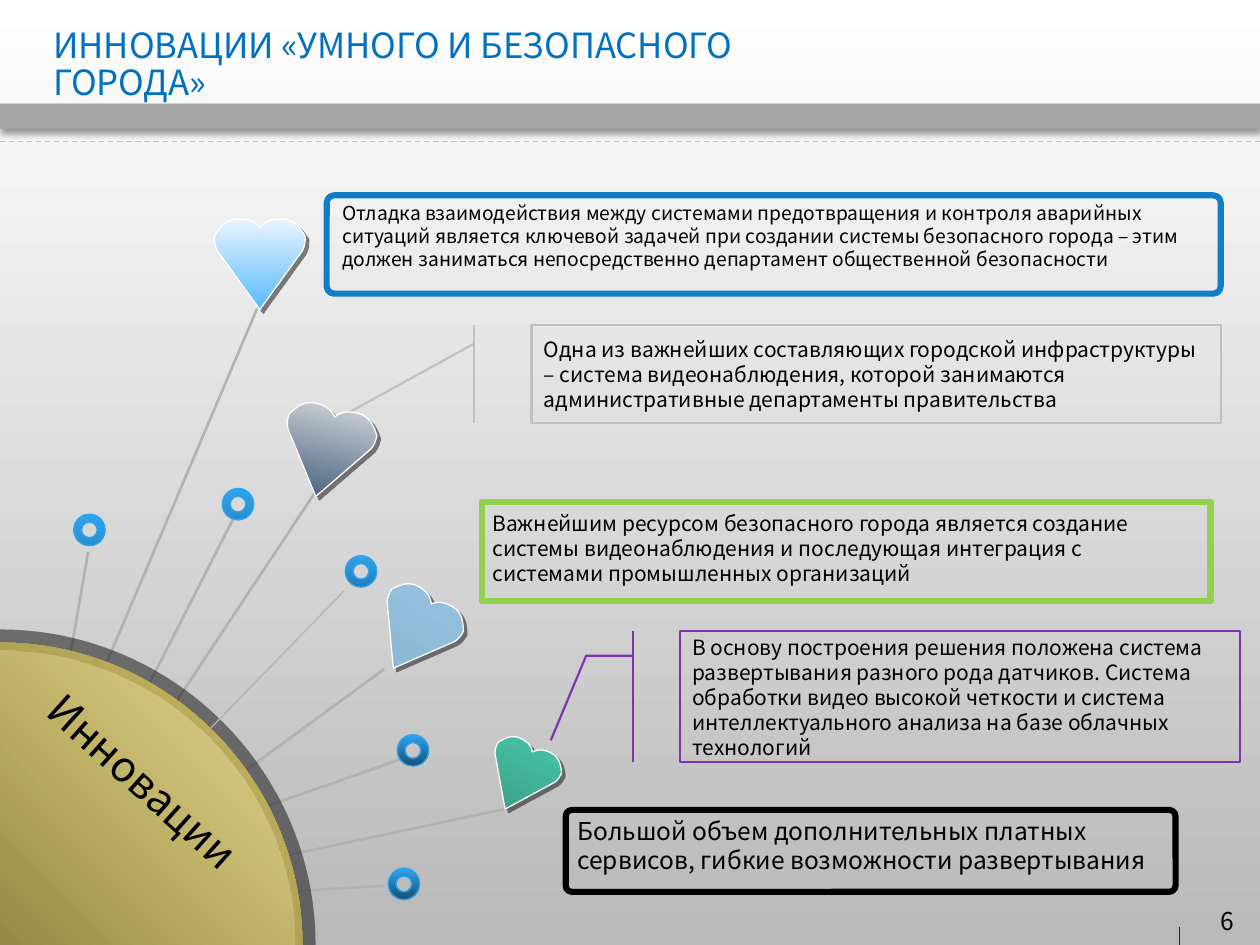
import dataclasses

import pptx
import pptx.dml.color
import pptx.enum.dml
import pptx.enum.shapes
import pptx.enum.text
import pptx.oxml
import pptx.oxml.ns
import pptx.util

Pt = pptx.util.Pt
RGB = pptx.dml.color.RGBColor.from_string
SHAPE = pptx.enum.shapes.MSO_SHAPE
ALIGN = pptx.enum.text.PP_ALIGN
ANCHOR = pptx.enum.text.MSO_ANCHOR
NAMES = pptx.oxml.ns.nsdecls("a")


@dataclasses.dataclass(frozen=True)
class Theme:
    font: str = "Noto Sans CJK SC"
    ink: str = "000000"
    title: str = "0070C0"
    bar: str = "A6A6A6"
    dash: str = "BFBFBF"
    tick: str = "172F37"
    spoke: str = "B2B2B2"
    shade: str = "080808"
    ring: str = "2FA3EE"
    edge: str = "FEFFFF"
    blue: str = "107EC6"
    green: str = "92D050"
    violet: str = "7E32B0"
    silver: str = "C0C0C0"
    back: tuple = ("FFFFFF", "B9B9B9")
    gold: tuple = ("948948", "CBBC63")
    gleam: tuple = ("CBBC63", "DED49C")
    head: float = 19.8
    label: float = 24
    large: float = 14
    body: float = 12
    small: float = 11
    lead: float = 1.19


T = Theme()
HALF = [(.5, .1), (.52, .07), (.56, .04), (.58, .03), (.64, 0), (.69, 0), (.75, 0),
        (.81, 0), (.86, .03), (.9, .06), (.94, .1), (.97, .14), (1, .19),
        (1, .25), (1, .29), (.97, .35)]
MIRROR = [(1 - u, v) for u, v in reversed(HALF)]
HEART = [("moveTo", HALF[:1])]
HEART += [("cubicBezTo", HALF[i:i + 3]) for i in range(1, 16, 3)]
HEART += [("lnTo", [(.5, 1)]), ("lnTo", MIRROR[:1])]
HEART += [("cubicBezTo", MIRROR[i:i + 3]) for i in range(1, 16, 3)]
SECTOR = [("moveTo", [(0, 0)]), ("cubicBezTo", [(.55, 0), (1, .45), (1, 1)]),
          ("lnTo", [(0, 1)])]


def paint(fill, tones, angle=90):
    if isinstance(tones, str):
        fill.solid()
        fill.fore_color.rgb = RGB(tones)
        return
    fill.gradient()
    fill.gradient_angle = 360 - angle
    for stop, tone in zip(fill.gradient_stops, tones):
        stop.color.rgb = RGB(tone)


def fade(shape, share):
    tone = shape.element.spPr.find(".//" + pptx.oxml.ns.qn("a:srgbClr"))
    tone.append(pptx.oxml.parse_xml(f'<a:alpha {NAMES} val="{share * 1000}"/>'))


def style(shape, fill=None, line=None, width=.75, angle=90):
    shape.shadow.inherit = False
    if fill:
        paint(shape.fill, fill, angle)
    else:
        shape.fill.background()
    if line:
        paint(shape.line.fill, line)
        shape.line.width = Pt(width)
    else:
        shape.line.fill.background()
    return shape


def shadow(shape, tone, share, blur, gap, angle):
    effects = shape.element.spPr.find(pptx.oxml.ns.qn("a:effectLst"))
    effects.append(pptx.oxml.parse_xml(
        f'<a:outerShdw {NAMES} blurRad="{Pt(blur)}" '
        f'dist="{Pt(gap)}" dir="{angle * 60000}" rotWithShape="0">'
        f'<a:srgbClr val="{tone}"><a:alpha val="{share * 1000}"/></a:srgbClr>'
        '</a:outerShdw>'))


def block(slide, kind, box, adjust=(), **look):
    shape = slide.shapes.add_shape(kind, *map(Pt, box))
    for i, value in enumerate(adjust):
        shape.adjustments[i] = value
    return style(shape, **look)


def outline(slide, x, y, size, moves, **look):
    form = slide.shapes.build_freeform(Pt(x), Pt(y), scale=1)
    form.add_line_segments([(Pt(x + size), Pt(y)), (Pt(x + size), Pt(y + size)),
                            (Pt(x), Pt(y + size))])
    shape = form.convert_to_shape()
    track = shape.element.spPr.find(".//" + pptx.oxml.ns.qn("a:path"))
    for step in list(track):
        track.remove(step)
    for kind, points in moves:
        marks = "".join(f'<a:pt x="{Pt(u * size)}" y="{Pt(v * size)}"/>' for u, v in points)
        track.append(pptx.oxml.parse_xml(f"<a:{kind} {NAMES}>{marks}</a:{kind}>"))
    track.append(pptx.oxml.parse_xml(f"<a:close {NAMES}/>"))
    return style(shape, **look)


def line(slide, start, end, tone, width=.75, dash=None):
    link = slide.shapes.add_connector(
        pptx.enum.shapes.MSO_CONNECTOR.STRAIGHT, *map(Pt, (*start, *end)))
    link.line.color.rgb = RGB(tone)
    link.line.width = Pt(width)
    if dash:
        link.line.dash_style = dash
    link.element.spPr.append(pptx.oxml.parse_xml(f"<a:effectLst {NAMES}/>"))


def write(host, text, size=T.body, tone=T.ink, align=ALIGN.LEFT,
          anchor=ANCHOR.TOP, lead=T.lead):
    frame = host.text_frame
    frame.word_wrap = True
    frame.vertical_anchor = anchor
    para = frame.paragraphs[0]
    para.text = text
    para.alignment = align
    para.line_spacing = Pt(size * lead)
    for run in para.runs:
        run.font.name = T.font
        run.font.size = Pt(size)
        run.font.color.rgb = RGB(tone)
    return host


def label(slide, box, text, **form):
    return write(slide.shapes.add_textbox(*map(Pt, box)), text, **form)


def header(slide, box):
    x, y, w, h = box
    bar = block(slide, SHAPE.RECTANGLE, (x, y + 59.2, w, 14.4), fill=T.bar)
    shadow(bar, T.ink, 40, 4, 3, 90)
    line(slide, (x, y + h), (x + w, y + h), T.dash,
         dash=pptx.enum.dml.MSO_LINE.DASH)
    label(slide, (x + 23.3, y + 19.4, 622, 36), "ИННОВАЦИИ «УМНОГО И БЕЗОПАСНОГО \vГОРОДА»",
          size=T.head, tone=T.title, anchor=ANCHOR.MIDDLE, lead=T.lead * .9)


def footer(slide, box):
    x, y, w, h = box
    line(slide, (x + 116.4, y + h - 10), (x + 116.4, y + h), T.tick)
    label(slide, (x, y, w, 22.3), "6", size=T.large, align=ALIGN.RIGHT)


def heart(slide, x, y, size, turn, tones):
    shape = outline(slide, x, y, size, HEART, fill=tones, line=T.edge)
    shape.rotation = turn
    shadow(shape, T.shade, 50, 0, 2.8, 45)


def sector(slide, x, y, size, tones):
    return outline(slide, x, y - size, size, SECTOR, fill=tones, angle=315)


def fan(slide, box):
    x, y, w, h = box
    hub = (12.2, 414.2)
    for tip, root in [((219.6, 386.2), (16.6, 397.7)), ((292.3, 341.5), (28.1, 397.7)),
                      ((230.4, 313.4), (22.3, 386.2)), ((219.6, 262.3), hub),
                      ((135.4, 172.3), hub), ((50.4, 195.4), hub),
                      ((180, 161.5), hub), ((146.9, 56.4), (0, 402))]:
        line(slide, (x + tip[0], y + tip[1]), (x + root[0], y + root[1]), T.spoke, 1.5)
    for dx, dy, tone in [(127, 159.1, "298ECF"), (197.3, 197.5, "247DB6"),
                         (227, 299.8, "175074"), (42.1, 173.8, "298ECF"),
                         (221.8, 376.1, "175074")]:
        block(slide, SHAPE.DONUT, (x + dx, y + dy, 18, 18), (.25,),
              fill=(T.ring, tone), line=T.ring)
    for dx, dy, size, turn, tones in [(277.2, 304.1, 40.3, 25.6, ("4BCAAD", "389781")),
                                      (122.6, 5.1, 51.8, 0, ("E9F3FF", "56BCFE")),
                                      (160.6, 112.6, 51.8, 13.4, ("DDDFE2", "355071")),
                                      (213.1, 217.7, 47.5, 30.6, ("97C5E3", "88B2CD"))]:
        heart(slide, x + dx, y + dy, size, turn, tones)
    fade(sector(slide, x, y + h, 180.3, T.shade), 50)
    line(slide, (x + 196.6, y + 217.7), (x, y + h), T.spoke)
    sector(slide, x, y + h, 172.8, T.gold)
    fade(sector(slide, x, y + h, 168.5, T.gleam), 0)
    label(slide, (x + 6.5, y + 309.8, 153.4, 36.7), "Инновации", size=T.label).rotation = 41.8


def card(slide, box, text, tone, curve=.076, shift=(0, 0), room=0, size=T.body):
    x, y, w, h = box
    block(slide, SHAPE.ROUNDED_RECTANGLE, box, (curve,), line=tone, width=3.5)
    label(slide, (x + shift[0], y + shift[1], w + room, h), text, size=size)


def callout(slide, box, text, kind, adjust, tone):
    write(block(slide, kind, box, adjust, line=tone, width=1.25), text,
          anchor=ANCHOR.MIDDLE)


def main():
    deck = pptx.Presentation()
    deck.slide_width, deck.slide_height = Pt(720), Pt(540)
    slide = deck.slides.add_slide(deck.slide_layouts[6])
    paint(slide.background.fill, T.back)
    header(slide, (0, 0, 720, 80.8))
    footer(slide, (557.6, 514.2, 154.8, 25.8))
    callout(slide, (388.4, 360.7, 320.4, 74.9), "В основу построения решения положена система развертывания разного рода датчиков. Система обработки видео высокой четкости и система интеллектуального анализа на базе облачных технологий",
            SHAPE.LINE_CALLOUT_2_BORDER_AND_ACCENT_BAR,
            (.188, -.083, .188, -.167, .833, -.23), T.violet)
    callout(slide, (303.8, 185.8, 393.8, 56), "Одна из важнейших составляющих городской инфраструктуры – система видеонаблюдения, которой занимаются административные департаменты правительства",
            SHAPE.LINE_CALLOUT_1_BORDER_AND_ACCENT_BAR,
            (.188, -.083, .991, -.291), T.silver)
    fan(slide, (0, 120, 320, 420))
    card(slide, (323.3, 462.8, 348.5, 46.8), "Большой объем дополнительных платных сервисов, гибкие возможности развертывания",
         T.ink, shift=(-.4, 0), room=11.5, size=T.large)
    card(slide, (275.5, 286.6, 416.2, 56.9), "Важнейшим ресурсом безопасного города является создание системы видеонаблюдения и последующая интеграция с системами промышленных организаций",
         T.green, curve=0, shift=(-1.2, 1.8), room=1.4)
    card(slide, (186.7, 111.6, 510.9, 56.2), "Отладка взаимодействия между системами предотвращения и контроля аварийных ситуаций является ключевой задачей при создании системы безопасного города – этим должен заниматься непосредственно департамент общественной безопасности",
         T.blue, shift=(1.9, 0), room=-7.6, size=T.small)
    deck.save("out.pptx")


if __name__ == "__main__":
    main()
